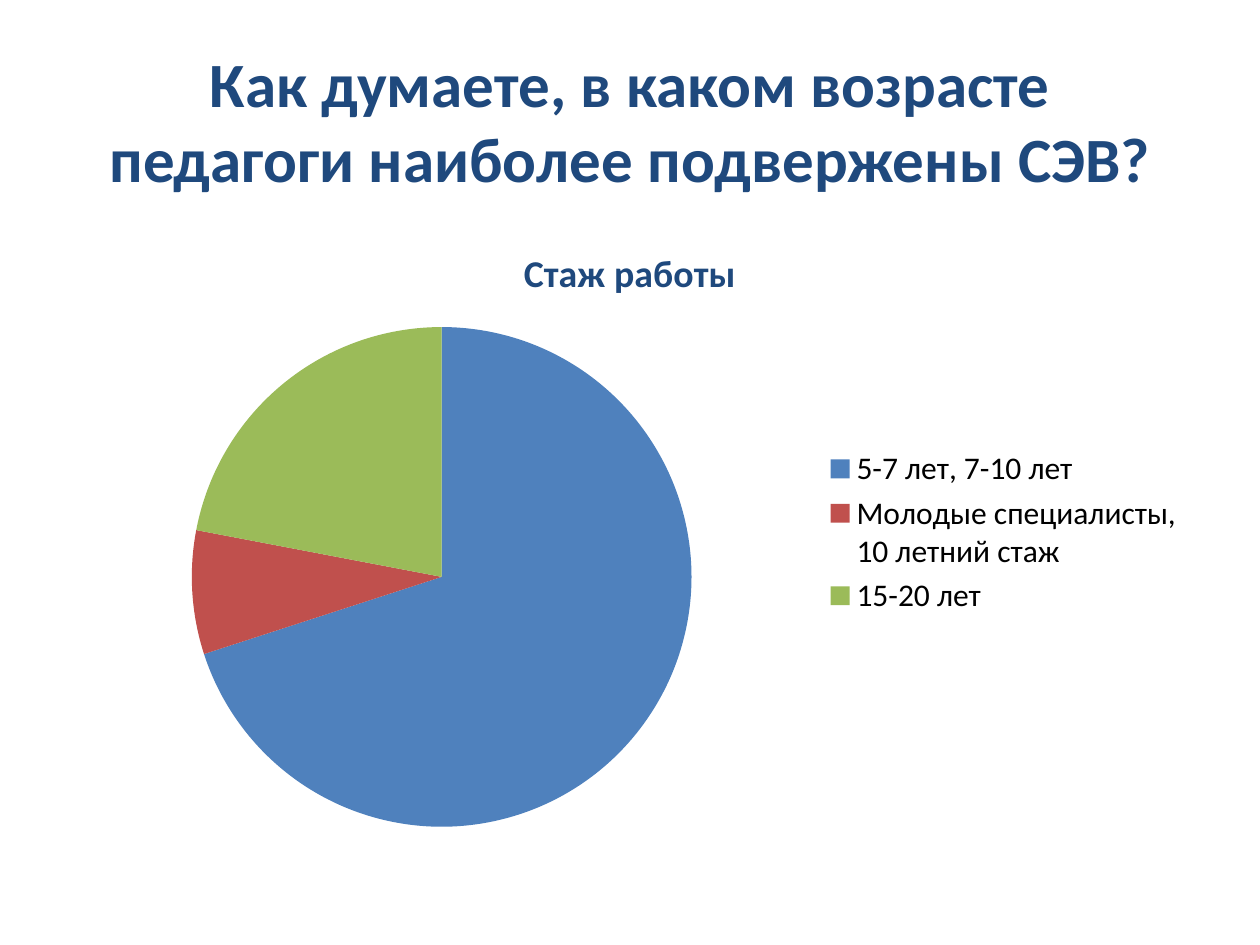
from dataclasses import dataclass

from pptx import Presentation
from pptx.chart.data import CategoryChartData
from pptx.dml.color import RGBColor
from pptx.enum.chart import XL_CHART_TYPE, XL_LEGEND_POSITION
from pptx.enum.text import MSO_ANCHOR, PP_ALIGN
from pptx.util import Inches, Pt


@dataclass(frozen=True)
class Theme:
    font: str = "Calibri"
    heading: str = "1F497D"
    text: str = "000000"
    slices: tuple = ("4F81BD", "C0504D", "9BBB59")
    title_size: float = 36
    chart_title_size: float = 21.6
    legend_size: float = 18


THEME = Theme()
TITLE_BOX = tuple(map(Inches, (0.5, 0.3, 9, 1.25)))
CHART_BOX = tuple(map(Inches, (0.5, 1.75, 9, 4.95)))

QUESTION = "Как думаете, в каком возрасте педагоги наиболее подвержены СЭВ?"
CHART_TITLE = "Стаж работы"
EXPERIENCE_SHARES = {
    "5-7 лет, 7-10 лет": 70,
    "Молодые специалисты, 10 летний стаж": 8,
    "15-20 лет": 22,
}


def style_font(font, size, color, bold=False):
    font.name = THEME.font
    font.size = Pt(size)
    font.bold = bold
    font.color.rgb = RGBColor.from_string(color)


def place_title(page, box):
    title = page.shapes.title
    title.left, title.top, title.width, title.height = box
    frame = title.text_frame
    frame.text = QUESTION
    frame.word_wrap = True
    frame.vertical_anchor = MSO_ANCHOR.MIDDLE
    frame.margin_left = frame.margin_right = Inches(0.2)
    frame.margin_top, frame.margin_bottom = Inches(0.1), Inches(0.05)
    para = frame.paragraphs[0]
    para.alignment = PP_ALIGN.CENTER
    style_font(para.runs[0].font, THEME.title_size, THEME.heading, bold=True)


def place_pie(page, box):
    data = CategoryChartData()
    data.categories = list(EXPERIENCE_SHARES)
    data.add_series(CHART_TITLE, list(EXPERIENCE_SHARES.values()))
    chart = page.shapes.add_chart(XL_CHART_TYPE.PIE, *box, data).chart
    style_font(chart.font, THEME.legend_size, THEME.text)

    chart.has_title = True
    title_frame = chart.chart_title.text_frame
    title_frame.text = CHART_TITLE
    style_font(title_frame.paragraphs[0].runs[0].font,
               THEME.chart_title_size, THEME.heading, bold=True)
    chart.chart_title.include_in_layout = False

    chart.has_legend = True
    chart.legend.position = XL_LEGEND_POSITION.RIGHT
    chart.legend.include_in_layout = False

    plot = chart.plots[0]
    plot.vary_by_categories = True
    for index, color in enumerate(THEME.slices):
        fill = plot.series[0].points[index].format.fill
        fill.solid()
        fill.fore_color.rgb = RGBColor.from_string(color)


def main():
    deck = Presentation()
    deck.slide_width, deck.slide_height = Inches(10), Inches(7.5)
    page = deck.slides.add_slide(deck.slide_layouts.get_by_name("Title Only"))
    place_title(page, TITLE_BOX)
    place_pie(page, CHART_BOX)
    deck.save("out.pptx")


if __name__ == "__main__":
    main()
